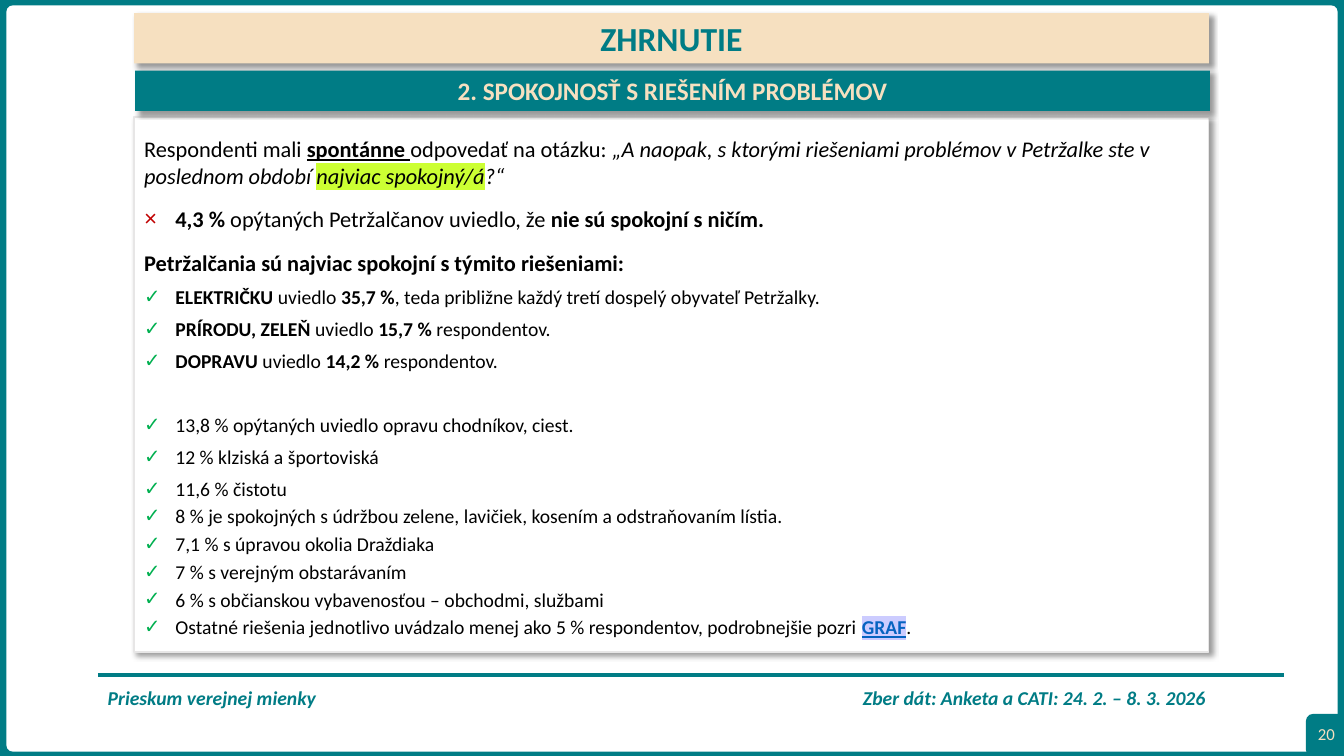
from dataclasses import dataclass

import lxml.etree
import pptx
import pptx.dml.color
import pptx.enum.shapes
import pptx.enum.text
import pptx.oxml.ns
import pptx.util

Inches = pptx.util.Inches
Pt = pptx.util.Pt
Shape = pptx.enum.shapes.MSO_SHAPE
Anchor = pptx.enum.text.MSO_ANCHOR
Align = pptx.enum.text.PP_ALIGN
qn = pptx.oxml.ns.qn


@dataclass(frozen=True)
class Theme:
    font: str = "Calibri"
    teal: str = "007C85"
    sand: str = "F6E0C0"
    white: str = "FFFFFF"
    black: str = "000000"
    panel_edge: str = "E7E6E6"
    cross: str = "C00000"
    check: str = "00B050"
    link: str = "0563C1"
    lime: str = "CCFF33"
    lilac: str = "CCCCFF"
    title: int = 24
    subtitle: int = 18
    lead: int = 16
    item: int = 14
    page: int = 12


THEME = Theme()
BOLD = {"bold": True}
ITALIC = {"italic": True}

SOLUTIONS = [
    (6, [("ELEKTRIČKU", BOLD), (" uviedlo ", {}), ("35,7 %", BOLD),
         (", teda približne každý tretí dospelý obyvateľ Petržalky.", {})]),
    (6, [("PRÍRODU, ZELEŇ", BOLD), (" uviedlo ", {}), ("15,7 %", BOLD), (" respondentov.", {})]),
    (6, [("DOPRAVU ", BOLD), ("uviedlo ", {}), ("14,2 %", BOLD), (" respondentov.", {})]),
    (29, [("13,8 % opýtaných uviedlo opravu chodníkov, ciest.", {})]),
    (6, [("12 % klziská a športoviská", {})]),
    (6, [("11,6 % čistotu", {})]),
    (3, [("8 % je spokojných s údržbou zelene, lavičiek, kosením a odstraňovaním lístia.", {})]),
    (3, [("7,1 % s úpravou okolia Draždiaka", {})]),
    (3, [("7 % s verejným obstarávaním", {})]),
    (3, [("6 % s občianskou vybavenosťou – obchodmi, službami", {})]),
    (3, [("Ostatné riešenia jednotlivo uvádzalo menej ako 5 % respondentov, podrobnejšie pozri ", {}),
         ("GRAF", {"bold": True, "underline": True, "color": THEME.link, "highlight": THEME.lilac}),
         (".", {})]),
]


def rgb(color):
    return pptx.dml.color.RGBColor.from_string(color)


def add_xml(parent, tag, **attributes):
    return lxml.etree.SubElement(parent, qn(tag), attributes)


def write_text(paragraph, text, size=THEME.item, color=THEME.black, bold=False,
               italic=False, underline=False, highlight=None):
    run = paragraph.add_run()
    run.text = text
    font = run.font
    font.name, font.size = THEME.font, Pt(size)
    font.bold, font.italic, font.underline = bold, italic, underline
    font.color.rgb = rgb(color)
    if highlight:
        marker = lxml.etree.Element(qn("a:highlight"))
        add_xml(marker, "a:srgbClr", val=highlight)
        run.font.fill._xPr.find(qn("a:solidFill")).addnext(marker)


def format_paragraph(paragraph, before=0, bullet=None, bullet_color=None):
    paragraph.space_before = Pt(before)
    properties = paragraph._p.get_or_add_pPr()
    indent = Inches(0.31) if bullet else 0
    properties.set("marL", str(indent))
    properties.set("indent", str(-indent))
    if bullet:
        add_xml(add_xml(properties, "a:buClr"), "a:srgbClr", val=bullet_color)
        add_xml(properties, "a:buChar", char=bullet)
    else:
        add_xml(properties, "a:buNone")


def place(shape, left, top, width, height):
    shape.left, shape.top = Inches(left), Inches(top)
    shape.width, shape.height = Inches(width), Inches(height)


def paint(shape, fill, line=None, shadow=False):
    shape.fill.solid()
    shape.fill.fore_color.rgb = rgb(fill)
    if line:
        shape.line.color.rgb = rgb(line)
        shape.line.width = Pt(1)
    else:
        shape.line.fill.background()
    shape.shadow.inherit = False
    if shadow:
        effects = shape.element.spPr.find(qn("a:effectLst"))
        outer = add_xml(effects, "a:outerShdw", blurRad=str(Pt(4)), dist=str(Pt(3)),
                        dir="2700000", algn="tl", rotWithShape="0")
        add_xml(add_xml(outer, "a:srgbClr", val=THEME.black), "a:alpha", val="40000")


def add_panel(slide, kind, box, fill, line=None, shadow=False):
    panel = slide.shapes.add_shape(kind, *map(Inches, box))
    paint(panel, fill, line, shadow)
    return panel


def add_text_box(slide, box, anchor=Anchor.TOP):
    frame = slide.shapes.add_textbox(*map(Inches, box)).text_frame
    frame.word_wrap = True
    frame.vertical_anchor = anchor
    return frame.paragraphs[0]


def bring_forward(shape):
    shape.element.getparent().append(shape.element)


def write_heading(shape, text, size, color):
    frame = shape.text_frame
    frame.auto_size = pptx.enum.text.MSO_AUTO_SIZE.NONE
    frame.vertical_anchor = Anchor.TOP
    heading = frame.paragraphs[0]
    heading.alignment = Align.CENTER
    write_text(heading, text, size=size, color=color, bold=True)


def add_frame(slide):
    add_panel(slide, Shape.RECTANGLE, (0, 0, 13.33, 7.5), THEME.teal, THEME.teal)
    page_area = add_panel(slide, Shape.ROUNDED_RECTANGLE, (0.07, 0.06, 13.19, 7.39),
                          THEME.white, THEME.white)
    page_area.adjustments[0] = 0.008


def add_footer(slide):
    footer = add_text_box(slide, (0.97, 6.82, 11.77, 0.44))
    footer.line_spacing = 0.7
    tabs = add_xml(footer._p.get_or_add_pPr(), "a:tabLst")
    add_xml(tabs, "a:tab", pos=str(Inches(7.49)), algn="l")
    write_text(footer, "Prieskum verejnej mienky\tZber dát: Anketa a CATI: 24. 2. – 8. 3. 2026",
               color=THEME.teal, bold=True, italic=True)

    add_panel(slide, Shape.ROUNDED_RECTANGLE, (12.96, 7.09, 0.37, 0.41), THEME.teal, THEME.teal)
    rule = slide.shapes.add_connector(pptx.enum.shapes.MSO_CONNECTOR.STRAIGHT,
                                      Inches(0.97), Inches(6.7), Inches(12.73), Inches(6.7))
    rule.line.color.rgb = rgb(THEME.teal)
    rule.line.width = Pt(3)
    add_xml(rule.element.spPr, "a:effectLst")

    page_number = add_text_box(slide, (12.9, 7.08, 0.51, 0.4), Anchor.MIDDLE)
    page_number.alignment = Align.CENTER
    write_text(page_number, "20", size=THEME.page, color=THEME.sand)


def write_findings(body):
    frame = body.text_frame
    frame.auto_size = pptx.enum.text.MSO_AUTO_SIZE.NONE
    lead = {"size": THEME.lead}
    question = {**lead, **ITALIC}
    strong = {**lead, **BOLD}
    cross = {"bullet": "×", "bullet_color": THEME.cross}
    check = {"bullet": "✓", "bullet_color": THEME.check}
    findings = [
        ({}, [("Respondenti mali ", lead), ("spontánne ", {**strong, "underline": True}),
              ("odpovedať na otázku: ", lead),
              ("„A naopak, s ktorými riešeniami problémov v Petržalke ste v poslednom období ", question),
              ("najviac spokojný/á", {**question, "highlight": THEME.lime}), ("?“", question)]),
        ({"before": 12, **cross}, [("4,3 %", strong), (" opýtaných Petržalčanov uviedlo, že ", lead),
                                   ("nie sú spokojní s ničím.", strong)]),
        ({"before": 12}, [("Petržalčania sú najviac spokojní s týmito riešeniami:", strong)]),
    ]
    findings += [({"before": before, **check}, runs) for before, runs in SOLUTIONS]
    for index, (layout, runs) in enumerate(findings):
        finding = frame.add_paragraph() if index else frame.paragraphs[0]
        format_paragraph(finding, **layout)
        for text, style in runs:
            write_text(finding, text, **style)


def main():
    deck = pptx.Presentation()
    deck.slide_width, deck.slide_height = Inches(13.33), Inches(7.5)
    slide = deck.slides.add_slide(deck.slide_layouts[1])
    add_frame(slide)
    add_footer(slide)
    add_panel(slide, Shape.RECTANGLE, (1.33, 1.16, 10.66, 5.31), THEME.white, THEME.panel_edge, True)

    title = slide.shapes.title
    place(title, 1.33, 0.13, 10.66, 0.5)
    paint(title, THEME.sand, shadow=True)
    write_heading(title, "ZHRNUTIE", THEME.title, THEME.teal)
    bring_forward(title)

    subtitle = add_panel(slide, Shape.RECTANGLE, (1.34, 0.7, 10.66, 0.4), THEME.teal, shadow=True)
    write_heading(subtitle, "2. SPOKOJNOSŤ S RIEŠENÍM PROBLÉMOV", THEME.subtitle, THEME.sand)

    body = slide.placeholders[1]
    place(body, 1.33, 1.29, 10.66, 5.14)
    write_findings(body)
    bring_forward(body)
    deck.save("out.pptx")


if __name__ == "__main__":
    main()
